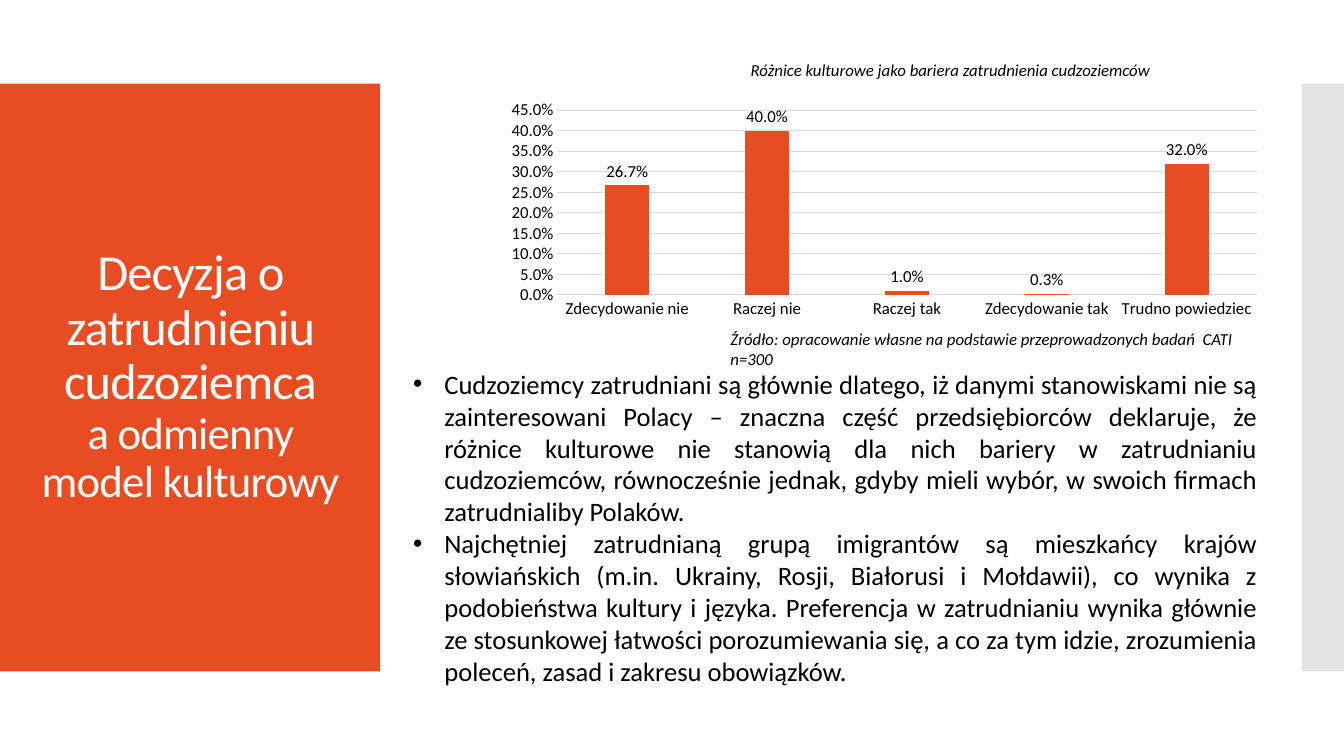
from lxml import etree
from pptx import Presentation
from pptx.chart.data import CategoryChartData
from pptx.dml.color import RGBColor
from pptx.enum.chart import XL_CHART_TYPE, XL_LABEL_POSITION, XL_TICK_MARK
from pptx.enum.shapes import MSO_SHAPE
from pptx.enum.text import MSO_ANCHOR, PP_ALIGN
from pptx.oxml.ns import qn
from pptx.util import Cm, Pt

COLUMNS = XL_CHART_TYPE.COLUMN_CLUSTERED
OUTSIDE = XL_LABEL_POSITION.OUTSIDE_END
NO_TICK = XL_TICK_MARK.NONE
RECTANGLE = MSO_SHAPE.RECTANGLE
TOP, MIDDLE = MSO_ANCHOR.TOP, MSO_ANCHOR.MIDDLE
LEFT, CENTER, JUSTIFY = PP_ALIGN.LEFT, PP_ALIGN.CENTER, PP_ALIGN.JUSTIFY

ORANGE = RGBColor(0xE8, 0x4C, 0x22)
GREY = RGBColor(0xC8, 0xC8, 0xC8)
GRID = RGBColor(0xD9, 0xD9, 0xD9)
WHITE = RGBColor(0xFF, 0xFF, 0xFF)
BLACK = RGBColor(0, 0, 0)
FONT = "Calibri"

prs = Presentation()
prs.slide_width, prs.slide_height = Cm(33.87), Cm(19.05)
slide = prs.slides.add_slide(prs.slide_layouts[6])


def add_frame(left, top, width, height, anchor=TOP):
    frame = slide.shapes.add_textbox(Cm(left), Cm(top), Cm(width), Cm(height)).text_frame
    frame.word_wrap = True
    frame.vertical_anchor = anchor
    return frame


def add_run(paragraph, text, size, color=BLACK, italic=False):
    run = paragraph.add_run()
    run.text = text
    run.font.name = FONT
    run.font.size = Pt(size)
    run.font.color.rgb = color
    run.font.italic = italic
    return run


# Side panels
for left, width, color in ((0, 9.58, ORANGE), (32.81, 1.06, GREY)):
    panel = slide.shapes.add_shape(RECTANGLE, Cm(left), Cm(2.11), Cm(width), Cm(14.81))
    panel.shadow.inherit = False
    panel.fill.solid()
    panel.fill.fore_color.rgb = color
    panel.line.fill.background()

# The grey panel, last in the loop, is half transparent
grey_fill = panel.fill._xPr.find(qn("a:solidFill"))[0]
etree.SubElement(grey_fill, qn("a:alpha"), val="50000")

# Title
title = add_frame(0.71, 3.12, 8.18, 12.78, MIDDLE).paragraphs[0]
title.alignment = CENTER
title.line_spacing = 0.9
title_runs = [add_run(title, "Decyzja o zatrudnieniu cudzoziemca", 36, WHITE)]
title.add_line_break()
title_runs.append(add_run(title, "a odmienny model kulturowy", 32, WHITE))
for run in title_runs:
    run.font._element.set("spc", "-60")

# Findings
findings = (
    "Cudzoziemcy zatrudniani są głównie dlatego, iż danymi stanowiskami nie są "
    "zainteresowani Polacy – znaczna część przedsiębiorców deklaruje, że różnice "
    "kulturowe nie stanowią dla nich bariery w zatrudnianiu cudzoziemców, równocześnie "
    "jednak, gdyby mieli wybór, w swoich firmach zatrudnialiby Polaków.",
    "Najchętniej zatrudnianą grupą imigrantów są mieszkańcy krajów słowiańskich (m.in. "
    "Ukrainy, Rosji, Białorusi i Mołdawii), co wynika z podobieństwa kultury i języka. "
    "Preferencja w zatrudnianiu wynika głównie ze stosunkowej łatwości porozumiewania "
    "się, a co za tym idzie, zrozumienia poleceń, zasad i zakresu obowiązków.",
)
findings_frame = add_frame(10.16, 9.14, 21.77, 8.38)
for number, finding in enumerate(findings):
    paragraph = findings_frame.add_paragraph() if number else findings_frame.paragraphs[0]
    paragraph.alignment = JUSTIFY
    add_run(paragraph, finding, 19)
    properties = paragraph._p.get_or_add_pPr()
    properties.set("marL", str(Cm(0.79)))
    properties.set("indent", str(-Cm(0.79)))
    etree.SubElement(properties, qn("a:buFont"), typeface="Arial")
    etree.SubElement(properties, qn("a:buChar"), char="•")

# Chart of answers
answers = CategoryChartData(number_format="0.0%")
answers.categories = ["Zdecydowanie nie", "Raczej nie", "Raczej tak",
                      "Zdecydowanie tak", "Trudno powiedziec"]
answers.add_series("Series 1", (0.267, 0.4, 0.01, 0.003, 0.32))
chart = slide.shapes.add_chart(COLUMNS, Cm(12.5), Cm(2.41), Cm(19.56), Cm(5.74), answers).chart
chart.has_legend = False
chart.has_title = False
chart.font.name = FONT
chart.font.size = Pt(12)
chart.font.color.rgb = BLACK

plot = chart.plots[0]
plot.gap_width = 219
plot.overlap = -27
plot.vary_by_categories = False
bars = plot.series[0].format.fill
bars.solid()
bars.fore_color.rgb = ORANGE
plot.has_data_labels = True
labels = plot.data_labels
labels.show_value = True
labels.number_format = "0.0%"
labels.number_format_is_linked = False
labels.position = OUTSIDE

# Chart axes
share_axis, answer_axis = chart.value_axis, chart.category_axis
share_axis.minimum_scale, share_axis.maximum_scale = 0, 0.45
share_axis.major_unit = 0.05
share_axis.tick_labels.number_format = "0.0%"
share_axis.tick_labels.number_format_is_linked = False
share_axis.format.line.fill.background()
for axis in (share_axis, answer_axis):
    axis.major_tick_mark = axis.minor_tick_mark = NO_TICK
for line in (share_axis.major_gridlines.format.line, answer_axis.format.line):
    line.color.rgb = GRID
    line.width = Pt(0.75)

# Chart source and heading
captions = (
    (18.16, 8.15, 14.3,
     "Źródło: opracowanie własne na podstawie przeprowadzonych badań  CATI n=300"),
    (18.67, 1.37, 13.26, "Różnice kulturowe jako bariera zatrudnienia cudzoziemców"),
)
for left, top, width, text in captions:
    caption = add_frame(left, top, width, 0.76).paragraphs[0]
    caption.alignment = LEFT
    add_run(caption, text, 12, italic=True)

prs.save("out.pptx")
